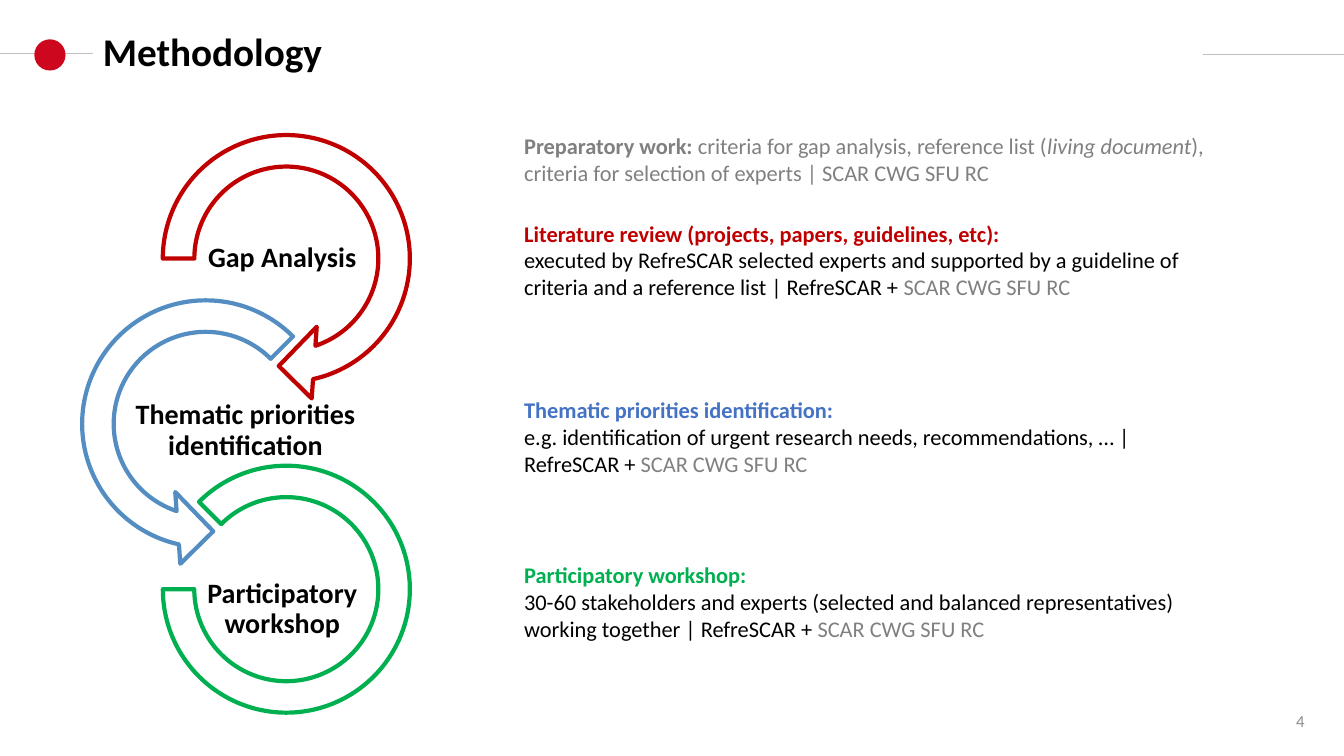
from pptx import Presentation
from pptx import util as u
from pptx.dml.color import RGBColor
from pptx.enum import shapes, text
from pptx.oxml.ns import qn

WIDE, HIGH = 13.33, 7.5
FONT = "Calibri"
HEX = {"black": "000000", "white": "FFFFFF", "dot": "CD071E", "rule": "BFBFBF",
       "page": "8C8C8C", "grey": "808080", "red": "C00000", "steel": "538DC1",
       "blue": "4472C4", "green": "00B050"}
KIND = shapes.MSO_SHAPE

TITLE, PAGE = "Methodology", "4"
TEAM = ("SCAR CWG SFU RC", "grey", "")

# kind, centre x, size, line colour, adjustments
RINGS = [
    (KIND.CIRCULAR_ARROW, 2.84, 2.85, "red", (0.1098, 11.423, 45, 108, 0.125)),
    (KIND.LEFT_CIRCULAR_ARROW, 2.04, 2.85, "steel", (0.1098, 11.423, 63, 189, 0.125)),
    (KIND.BLOCK_ARC, 2.84, 2.45, "green", (135, 108, 0.1274)),
]
# text, left, top, width
LABELS = [
    ("Gap Analysis ", 2.04, 2.17, 1.58),
    ("Thematic priorities identification", 1.25, 3.88, 2.37),
    ("Participatory workshop", 1.87, 5.65, 1.86),
]
# top, paragraphs of runs (text, colour, style)
NOTES = [
    (1.26, [[("Preparatory work: ", "grey", "b"),
             ("criteria for gap analysis, reference list (", "grey", ""),
             ("living document", "grey", "i"),
             ("), criteria for selection of experts | SCAR CWG SFU RC", "grey", "")]]),
    (2.13, [[("Literature review (projects, papers, guidelines, etc):", "red", "b")],
            [("executed by RefreSCAR selected experts and supported by a guideline of "
              "criteria and a reference list | RefreSCAR + ", "black", ""), TEAM]]),
    (3.88, [[("Thematic priorities identification:", "blue", "b")],
            [("e.g. identification of urgent research needs, recommendations, … | "
              "RefreSCAR + ", "black", ""), TEAM]]),
    (5.52, [[("Participatory workshop:", "green", "b")],
            [("30-60 stakeholders and experts (selected and balanced representatives) "
              "working together | RefreSCAR + ", "black", ""), TEAM]]),
]
RING_Y, RING_STEP = 2.565, 1.64
LABEL_H = 0.79
NOTE_X, NOTE_W = 5.1, 7.08
LINE_H = 0.27

deck = Presentation()
deck.slide_width, deck.slide_height = u.Inches(WIDE), u.Inches(HIGH)
slide = deck.slides.add_slide(deck.slide_layouts[5])


def ink(name):
    return RGBColor.from_string(HEX[name])


def inch(*sizes):
    return [u.Inches(size) for size in sizes]


def style(para, size, color, bold=False):
    font = para.font
    font.name, font.size, font.bold = FONT, u.Pt(size), bold
    font.color.rgb = ink(color)


def add_rule(start, end, y):
    rule = slide.shapes.add_connector(shapes.MSO_CONNECTOR.STRAIGHT, *inch(start, y, end, y))
    rule.line.color.rgb, rule.line.width = ink("rule"), u.Pt(0.75)
    rule._element.spPr.append(rule._element.makeelement(qn("a:effectLst"), {}))


def add_shape(kind, box, fill):
    shape = slide.shapes.add_shape(kind, *inch(*box))
    shape.shadow.inherit = False
    shape.fill.solid()
    shape.fill.fore_color.rgb = ink(fill)
    shape.line.fill.background()
    return shape


def add_box(box, inset, anchor):
    frame = slide.shapes.add_textbox(*inch(*box)).text_frame
    frame.word_wrap, frame.vertical_anchor = True, anchor
    (frame.margin_left, frame.margin_top,
     frame.margin_right, frame.margin_bottom) = inch(*inset)
    return frame


def add_header():
    add_rule(0, 0.92, 0.53)
    add_shape(KIND.OVAL, (0.34, 0.39, 0.31, 0.31), "dot")
    add_rule(11.88, WIDE, 0.54)
    title = slide.shapes.title
    title.left, title.top, title.width, title.height = inch(0.92, 0.09, 11.01, 0.88)
    title.fill.solid()
    title.fill.fore_color.rgb = ink("white")
    title.text_frame.text = TITLE
    title.text_frame.vertical_anchor = text.MSO_ANCHOR.MIDDLE
    para = title.text_frame.paragraphs[0]
    para.alignment, para.line_spacing = text.PP_ALIGN.LEFT, 0.9
    style(para, 28, "black", True)
    # The title's fill must lie above the header rules.
    slide.shapes._spTree.append(title._element)


def add_page():
    frame = add_box((12.26, 6.95, 0.68, 0.4), (0.1, 0.05, 0, 0.05), text.MSO_ANCHOR.MIDDLE)
    frame.text = PAGE
    para = frame.paragraphs[0]
    para.alignment = text.PP_ALIGN.RIGHT
    style(para, 12, "page")


def add_step(row, ring, label):
    kind, mid, size, color, adjust = ring
    top = RING_Y + row * RING_STEP - size / 2
    shape = add_shape(kind, (mid - size / 2, top, size, size), "white")
    shape.line.color.rgb, shape.line.width = ink(color), u.Pt(3)
    for spot, value in enumerate(adjust):
        shape.adjustments[spot] = value

    words, left, top, width = label
    frame = add_box((left, top, width, LABEL_H), [0.01] * 4, text.MSO_ANCHOR.MIDDLE)
    frame.text = words
    para = frame.paragraphs[0]
    para.alignment, para.line_spacing = text.PP_ALIGN.CENTER, 0.9
    style(para, 20, "black", True)


def add_note(top, paras):
    rows = max(2, len(paras) + 1)
    frame = add_box((NOTE_X, top, NOTE_W, 0.1 + rows * LINE_H),
                    (0.1, 0.05, 0.1, 0.05), text.MSO_ANCHOR.TOP)
    frame.auto_size = text.MSO_AUTO_SIZE.SHAPE_TO_FIT_TEXT
    for spot, runs in enumerate(paras):
        para = frame.add_paragraph() if spot else frame.paragraphs[0]
        para.font.name, para.font.size = FONT, u.Pt(16)
        for words, color, look in runs:
            run = para.add_run()
            run.text = words
            run.font.color.rgb = ink(color)
            run.font.bold, run.font.italic = look == "b", look == "i"


add_header()
add_page()
for row, (ring, label) in enumerate(zip(RINGS, LABELS)):
    add_step(row, ring, label)
for top, paras in NOTES:
    add_note(top, paras)
deck.save("out.pptx")
